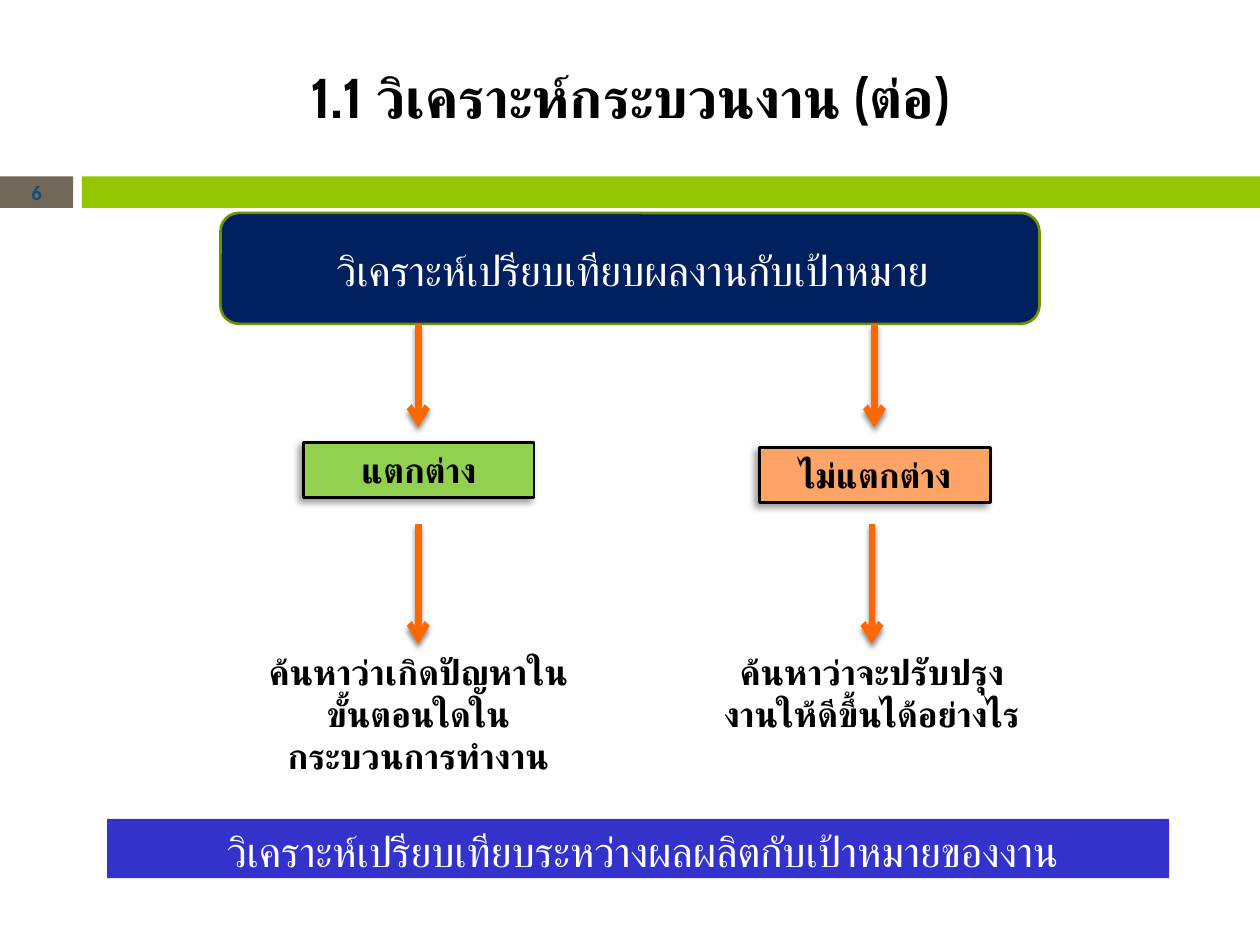
from dataclasses import dataclass
from typing import Optional

from lxml.etree import SubElement
from pptx import Presentation
from pptx.dml.color import RGBColor
from pptx.enum.lang import MSO_LANGUAGE_ID
from pptx.enum.shapes import MSO_CONNECTOR, MSO_SHAPE
from pptx.enum.text import MSO_ANCHOR, PP_ALIGN
from pptx.oxml import parse_xml
from pptx.oxml.ns import nsdecls, qn
from pptx.util import Inches, Pt


@dataclass(frozen=True)
class Theme:
    thai_font: str = "Cabin"
    number_font: str = "Calibri"
    title_size: float = 32
    banner_size: float = 24
    body_size: float = 20
    number_size: float = 11.9
    black: str = "000000"
    white: str = "FFFFFF"
    taupe: str = "71685A"
    lime: str = "94C600"
    olive: str = "6D9200"
    number: str = "184E6D"
    navy: str = "002060"
    blue: str = "3333CC"
    green: str = "92D050"
    peach: str = "FFA466"
    orange: str = "FF6700"


@dataclass(frozen=True)
class Box:
    left: float
    top: float
    width: float
    height: float


@dataclass(frozen=True)
class Shadow:
    alpha: int
    blur: float
    distance: float
    angle: int
    color: str = "000000"


@dataclass(frozen=True)
class Words:
    text: str
    size: float
    color: str = "000000"
    bold: bool = True
    font: str = "Cabin"
    anchor: MSO_ANCHOR = MSO_ANCHOR.TOP
    space_before: float = 0


@dataclass(frozen=True)
class Branch:
    verdict: str
    fill: str
    verdict_box: Box
    question: str
    question_box: Box
    upper_x: float
    lower_x: float


THEME = Theme()
VERDICT_SHADOW = Shadow(40, 4, 3, 135)
ARROW_SHADOW = Shadow(45, 3, 2.4, 90)
TITLE_SHADOW = Shadow(60, 3, 2, 45, THEME.lime)


def effects(shadow: Optional[Shadow] = None):
    effect_list = parse_xml(f"<a:effectLst {nsdecls('a')}/>")
    if shadow:
        outer = SubElement(
            effect_list, qn("a:outerShdw"),
            blurRad=str(Pt(shadow.blur)), dist=str(Pt(shadow.distance)),
            dir=str(shadow.angle * 60000), algn="ctr", rotWithShape="0")
        color = SubElement(outer, qn("a:srgbClr"), val=shadow.color)
        SubElement(color, qn("a:alpha"), val=str(shadow.alpha * 1000))
    return effect_list


def inches(box: Box) -> tuple:
    return tuple(Inches(v) for v in (box.left, box.top, box.width, box.height))


def write(holder, words: Words):
    frame = holder.text_frame
    frame.word_wrap = True
    frame.vertical_anchor = words.anchor
    paragraph = frame.paragraphs[0]
    paragraph.alignment = PP_ALIGN.CENTER
    if words.space_before:
        paragraph.space_before = Pt(words.space_before)
    run = paragraph.add_run()
    run.text = words.text
    run.font.color.rgb = RGBColor.from_string(words.color)
    formats = {"size": Pt(words.size), "bold": words.bold, "name": words.font,
               "language_id": MSO_LANGUAGE_ID.THAI}
    for name, value in formats.items():
        setattr(run.font, name, value)
    properties = run.font._element
    SubElement(properties, qn("a:cs"), typeface=words.font)
    return properties


def add_text(slide, box: Box, words: Words):
    return write(slide.shapes.add_textbox(*inches(box)), words)


def add_block(slide, box: Box, fill: str, outline: Optional[str] = None,
              words: Optional[Words] = None, shadow: Optional[Shadow] = None,
              kind: MSO_SHAPE = MSO_SHAPE.RECTANGLE):
    block = slide.shapes.add_shape(kind, *inches(box))
    block.fill.solid()
    block.fill.fore_color.rgb = RGBColor.from_string(fill)
    if outline:
        block.line.color.rgb = RGBColor.from_string(outline)
        block.line.width = Pt(1.5)
    else:
        block.line.fill.background()
    if shadow:
        block._element.spPr.append(effects(shadow))
    else:
        block.shadow.inherit = False
    if words:
        write(block, words)
    return block


def add_arrow(slide, x: float, top: float, bottom: float):
    arrow = slide.shapes.add_connector(
        MSO_CONNECTOR.STRAIGHT, Inches(x), Inches(top), Inches(x), Inches(bottom))
    arrow.line.color.rgb = RGBColor.from_string(THEME.orange)
    arrow.line.width = Pt(3.75)
    SubElement(arrow.line._get_or_add_ln(), qn("a:tailEnd"), type="arrow")
    arrow._element.spPr.append(effects(ARROW_SHADOW))


def add_branch(slide, branch: Branch):
    add_block(slide, branch.verdict_box, branch.fill, THEME.black,
              Words(branch.verdict, THEME.body_size), VERDICT_SHADOW)
    add_text(slide, branch.question_box, Words(branch.question, THEME.body_size))
    add_arrow(slide, branch.upper_x, 2.57, 3.39)
    add_arrow(slide, branch.lower_x, 4.16, 5.11)


BRANCHES = (
    Branch("แตกต่าง", THEME.green, Box(2.41, 3.51, 1.83, 0.44),
           "ค้นหาว่าเกิดปัญหาในขั้นตอนใดในกระบวนการทำงาน",
           Box(2, 5.11, 2.64, 1.11), 3.32, 3.32),
    Branch("ไม่แตกต่าง", THEME.peach, Box(6.03, 3.55, 1.83, 0.44),
           "ค้นหาว่าจะปรับปรุงงานให้ดีขึ้นได้อย่างไร",
           Box(5.6, 5.11, 2.64, 1.11), 6.94, 6.92),
)


def main():
    deck = Presentation()
    deck.slide_width, deck.slide_height = Inches(10), Inches(7.5)
    slide = deck.slides.add_slide(deck.slide_layouts[6])

    add_block(slide, Box(0, 1.4, 0.58, 0.25), THEME.taupe)
    add_block(slide, Box(0.65, 1.4, 9.35, 0.25), THEME.lime)
    add_text(slide, Box(0, 1.39, 0.58, 0.27),
             Words("6", THEME.number_size, THEME.number, font=THEME.number_font,
                   anchor=MSO_ANCHOR.MIDDLE))

    summary = add_block(
        slide, Box(0.85, 6.5, 8.43, 0.47), THEME.blue,
        words=Words("วิเคราะห์เปรียบเทียบระหว่างผลผลิตกับเป้าหมายของงาน",
                    THEME.banner_size, THEME.white, bold=False, space_before=4.8))
    summary.text_frame.margin_left = Inches(0.17)

    add_block(slide, Box(1.75, 1.69, 6.5, 0.88), THEME.navy, THEME.olive,
              kind=MSO_SHAPE.ROUNDED_RECTANGLE)
    add_text(slide, Box(2, 1.89, 6.04, 0.5),
             Words("วิเคราะห์เปรียบเทียบผลงานกับเป้าหมาย",
                   THEME.banner_size, THEME.white, bold=False))
    for branch in BRANCHES:
        add_branch(slide, branch)

    title = add_text(slide, Box(0.5, 0.3, 9, 0.93),
                     Words("1.1 วิเคราะห์กระบวนงาน (ต่อ)", THEME.title_size,
                           anchor=MSO_ANCHOR.MIDDLE))
    title.find(qn("a:solidFill")).addnext(effects(TITLE_SHADOW))

    deck.save("out.pptx")


if __name__ == "__main__":
    main()
